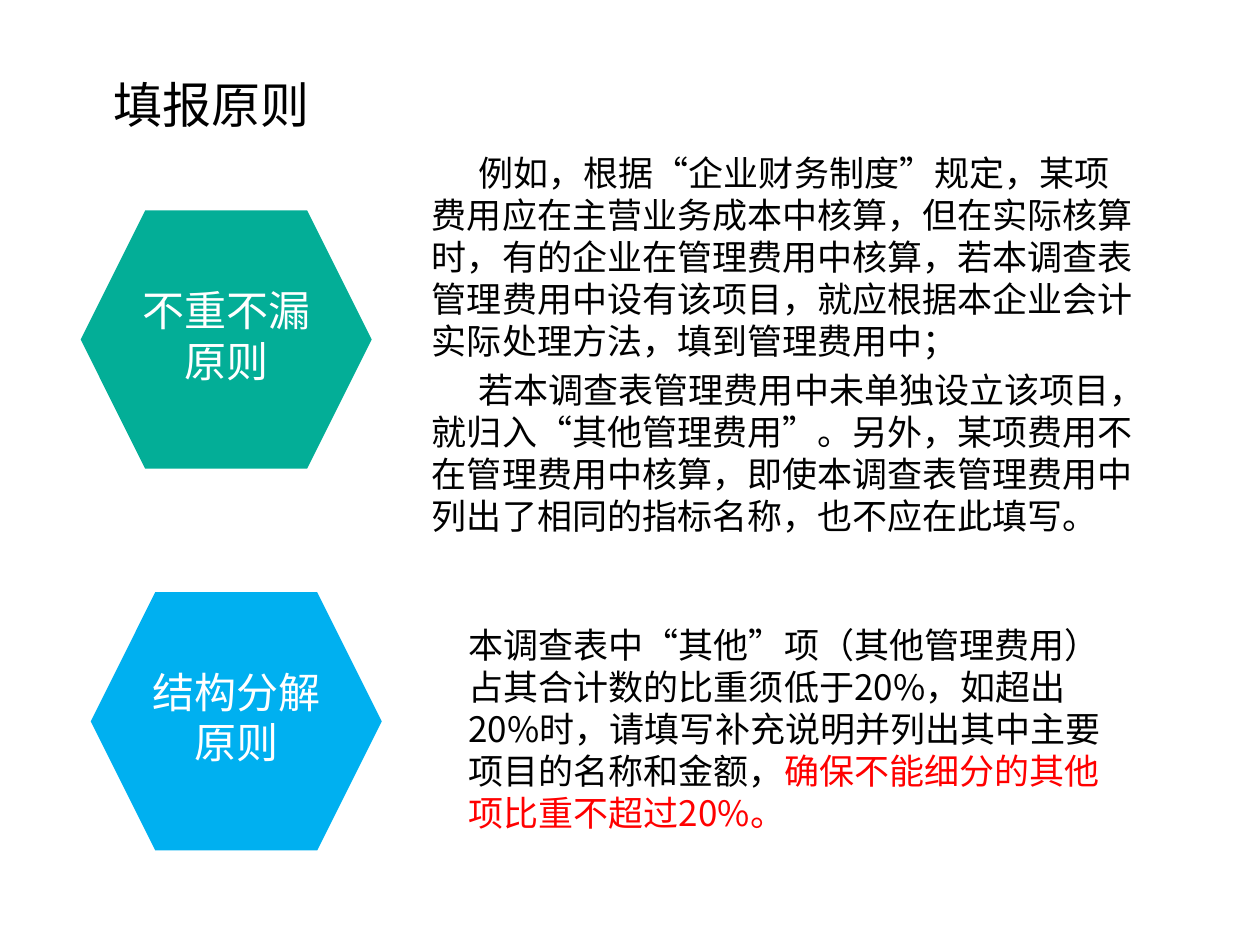
from dataclasses import dataclass

from pptx import Presentation
from pptx.dml.color import RGBColor
from pptx.enum.shapes import MSO_SHAPE
from pptx.enum.text import MSO_ANCHOR, PP_ALIGN
from pptx.util import Inches, Pt


@dataclass(frozen=True)
class Theme:
    """Colours, fonts and type sizes of the slide."""
    ink: RGBColor = RGBColor(0x00, 0x00, 0x00)
    white: RGBColor = RGBColor(0xFF, 0xFF, 0xFF)
    warning: RGBColor = RGBColor(0xFF, 0x00, 0x00)
    green: RGBColor = RGBColor(0x03, 0xAE, 0x97)
    blue: RGBColor = RGBColor(0x00, 0xB0, 0xF0)
    body_font: str = "Noto Sans CJK SC"
    label_font: str = "Calibri"
    title_size: Pt = Pt(28)
    label_size: Pt = Pt(24)
    body_size: Pt = Pt(20)
    paragraph_gap: Pt = Pt(4)


THEME = Theme()


def add_run(paragraph, text, size, color, font=THEME.body_font):
    """Append one formatted run to a paragraph."""
    run = paragraph.add_run()
    run.text = text
    run.font.name = font
    run.font.size = size
    run.font.color.rgb = color


def next_paragraph(frame, index):
    """Return the first paragraph of a frame, or a new one after it."""
    return frame.add_paragraph() if index else frame.paragraphs[0]


def place_title(slide, box, text):
    """Move the title placeholder into the box and fill it."""
    title = slide.shapes.title
    title.left, title.top, title.width, title.height = map(Inches, box)
    frame = title.text_frame
    frame.vertical_anchor = MSO_ANCHOR.MIDDLE
    paragraph = frame.paragraphs[0]
    paragraph.alignment = PP_ALIGN.CENTER
    add_run(paragraph, text, THEME.title_size, THEME.ink)


def add_principle(slide, box, color, lines):
    """Group a hexagon filling the box with its centred label."""
    left, top, width, height = box
    group = slide.shapes.add_group_shape()
    hexagon = group.shapes.add_shape(MSO_SHAPE.HEXAGON, *map(Inches, box))
    hexagon.shadow.inherit = False
    hexagon.fill.solid()
    hexagon.fill.fore_color.rgb = color
    hexagon.line.fill.background()

    label_width, label_height = 1.55, 0.91
    label_box = (left + (width - label_width) / 2, top + 0.54, label_width, label_height)
    frame = group.shapes.add_textbox(*map(Inches, label_box)).text_frame
    frame.word_wrap = False
    for index, line in enumerate(lines):
        paragraph = next_paragraph(frame, index)
        paragraph.alignment = PP_ALIGN.CENTER
        add_run(paragraph, line, THEME.label_size, THEME.white, THEME.label_font)


def add_explanation(slide, box, paragraphs, indent=0):
    """Write paragraphs of coloured runs, with a first-line indent, into the box."""
    frame = slide.shapes.add_textbox(*map(Inches, box)).text_frame
    frame.word_wrap = True
    for index, runs in enumerate(paragraphs):
        paragraph = next_paragraph(frame, index)
        paragraph.space_before = THEME.paragraph_gap
        properties = paragraph._p.get_or_add_pPr()
        properties.set("marL", "0")
        properties.set("indent", str(Inches(indent)))
        for text, color in runs:
            add_run(paragraph, text, THEME.body_size, color)


def main():
    """Build the slide on the filling-in principles."""
    presentation = Presentation()
    presentation.slide_width, presentation.slide_height = Inches(10), Inches(7.5)
    slide = presentation.slides.add_slide(presentation.slide_layouts[5])

    place_title(slide, (0, 0.54, 3.36, 0.57), "填报原则")

    add_principle(slide, (0.64, 1.67, 2.31, 2.05), THEME.green, ("不重不漏", "原则"))
    add_explanation(slide, (3.33, 1.15, 5.8, 3.2), [
        [("例如，根据“企业财务制度”规定，某项费用应在主营业务成本中核算，"
          "但在实际核算时，有的企业在管理费用中核算，若本调查表管理费用中设有该项目，"
          "就应根据本企业会计实际处理方法，填到管理费用中；", THEME.ink)],
        [("若本调查表管理费用中未单独设立该项目，就归入“其他管理费用”。"
          "另外，某项费用不在管理费用中核算，即使本调查表管理费用中列出了相同的指标名称，"
          "也不应在此填写。", THEME.ink)],
    ], indent=0.37)

    add_principle(slide, (0.72, 4.7, 2.31, 2.05), THEME.blue, ("结构分解", "原则"))
    add_explanation(slide, (3.62, 4.9, 5.39, 1.78), [
        [("本调查表中“其他”项（其他管理费用）占其合计数的比重须低于20%，"
          "如超出20%时，请填写补充说明并列出其中主要项目的名称和金额，", THEME.ink),
         ("确保不能细分的其他项比重不超过20%。", THEME.warning)],
    ])

    presentation.save("out.pptx")


if __name__ == "__main__":
    main()
